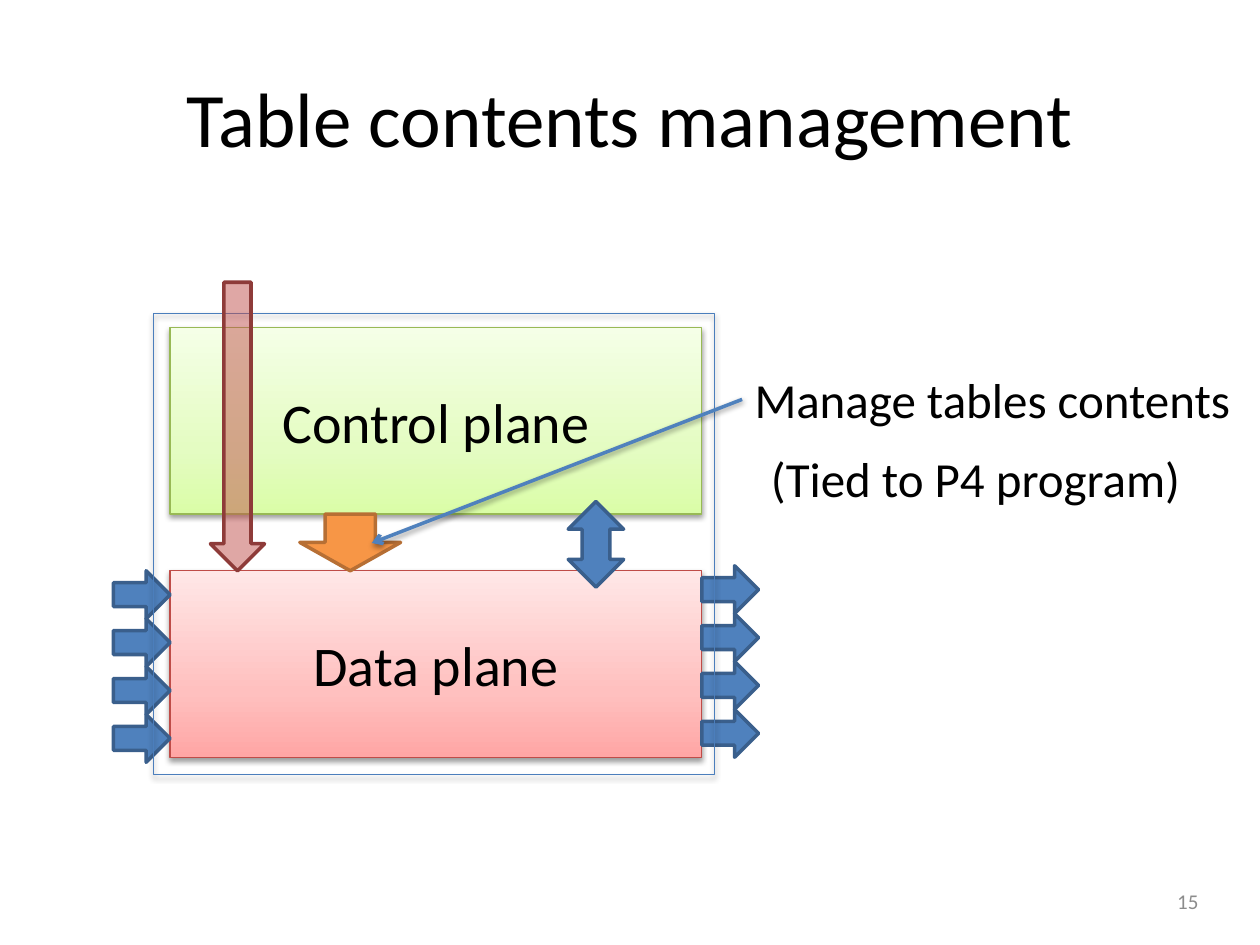
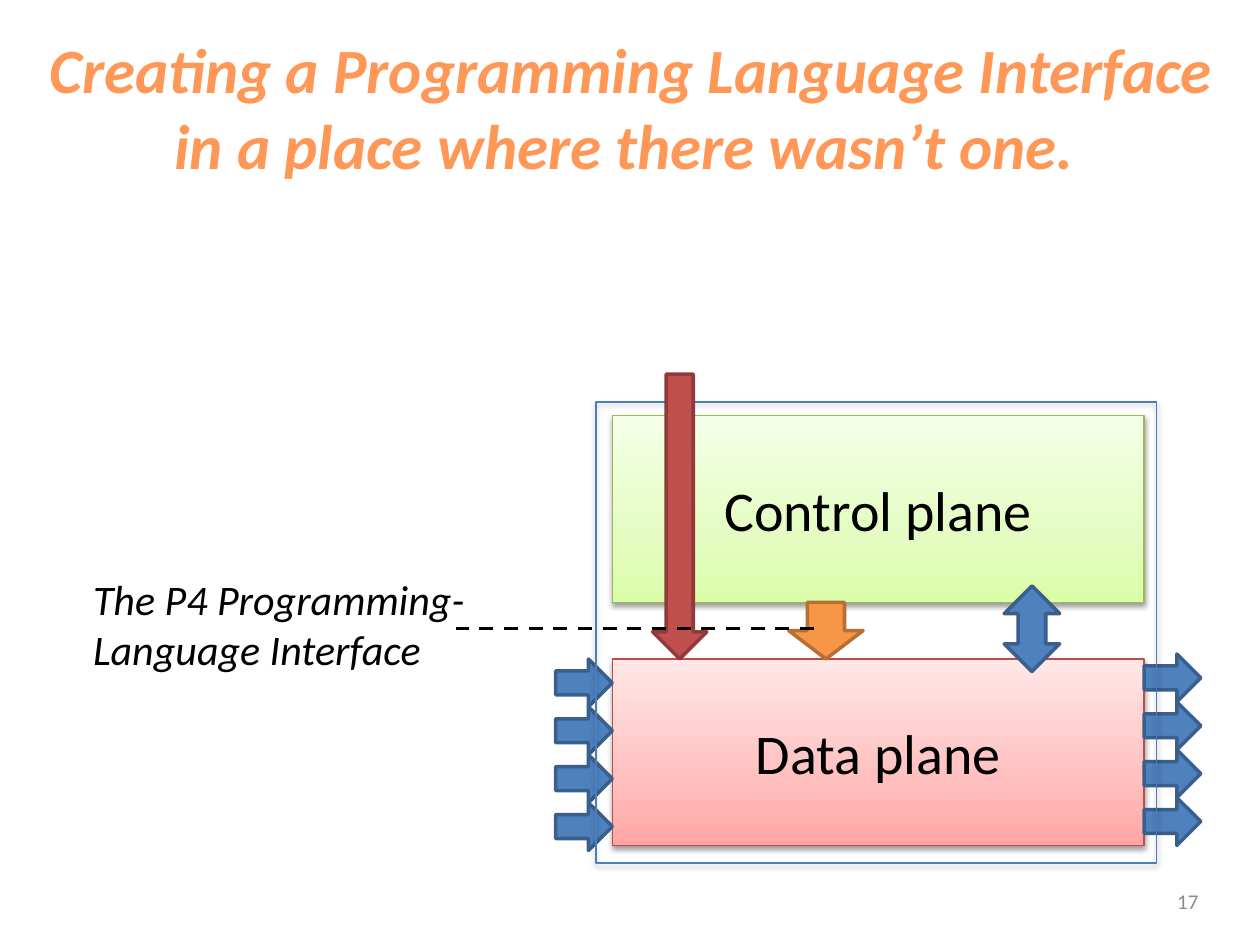
from copy import deepcopy
from dataclasses import dataclass

from pptx import Presentation
from pptx.dml.color import RGBColor
from pptx.enum.dml import MSO_LINE
from pptx.enum.shapes import MSO_CONNECTOR, MSO_SHAPE
from pptx.enum.text import MSO_ANCHOR, MSO_AUTO_SIZE, PP_ALIGN
from pptx.oxml import parse_xml
from pptx.oxml.ns import nsdecls, qn
from pptx.util import Pt

PX = 9144  # 100 px to the inch
RECTANGLE = MSO_SHAPE.RECTANGLE
RIGHT_ARROW = MSO_SHAPE.RIGHT_ARROW
DOWN_ARROW = MSO_SHAPE.DOWN_ARROW
UP_DOWN_ARROW = MSO_SHAPE.UP_DOWN_ARROW
STRAIGHT = MSO_CONNECTOR.STRAIGHT
DASH = MSO_LINE.DASH
TOP, MIDDLE = MSO_ANCHOR.TOP, MSO_ANCHOR.MIDDLE
LEFT, CENTER, RIGHT = PP_ALIGN.LEFT, PP_ALIGN.CENTER, PP_ALIGN.RIGHT
NO_AUTOFIT = MSO_AUTO_SIZE.NONE


@dataclass(frozen=True)
class Theme:
    font: str = "Calibri"
    text: str = "000000"
    highlight: str = "FF9856"
    muted: str = "8C8C8C"
    blue: str = "4F81BD"
    blue_line: str = "3A5F8C"
    frame_line: str = "4B7EBC"
    orange: str = "F79646"
    orange_line: str = "B76F34"
    red: str = "C0504D"
    red_line: str = "8E3B39"
    green_gradient: tuple = ((0, "DAFDA7"), (0.35, "E4FCC2"), (1, "F5FFE7"))
    green_line: str = "98B955"
    pink_gradient: tuple = ((0, "FFA6A5"), (0.35, "FFC0BF"), (1, "FFE7E7"))
    pink_line: str = "BF4C48"
    title_size: int = 44
    statement_size: int = 36
    plane_size: int = 32
    note_size: int = 28
    caption_size: int = 24
    number_size: int = 12
    thin: float = 0.75
    thick: float = 2
    shadow: str = (
        f'<a:outerShdw {nsdecls("a")} blurRad="40000" dist="20000" dir="5400000" '
        'rotWithShape="0"><a:srgbClr val="000000"><a:alpha val="38000"/>'
        "</a:srgbClr></a:outerShdw>"
    )


theme = Theme()


def write_text(text_frame, text, *, size, color=theme.text, align=LEFT,
               anchor=TOP, wrap=True, bold=False, italic=False):
    text_frame.auto_size = NO_AUTOFIT
    text_frame.word_wrap = wrap
    text_frame.vertical_anchor = anchor
    paragraph = text_frame.paragraphs[0]
    paragraph.text = text
    paragraph.alignment = align
    for run in paragraph.runs:
        font = run.font
        font.name, font.size = theme.font, Pt(size)
        font.bold, font.italic = bold, italic
        font.color.rgb = RGBColor.from_string(color)


def draw_shape(slide, kind, box, *, line, width=theme.thick, fill=None,
               opacity=100, shadow=False):
    """Add a shape; fill is a colour, a tuple of gradient stops or None."""
    shape = slide.shapes.add_shape(kind, *(length * PX for length in box))
    properties = shape._element.spPr
    if fill is None:
        shape.fill.background()
    elif isinstance(fill, tuple):
        shape.fill.gradient()
        shape.fill.gradient_angle = 90
        stop_list = properties.find(".//" + qn("a:gsLst"))
        stop_list.append(deepcopy(stop_list[0]))
        for stop, (position, color) in zip(shape.fill.gradient_stops, fill):
            stop.position = position
            stop.color.rgb = RGBColor.from_string(color)
    else:
        shape.fill.solid()
        shape.fill.fore_color.rgb = RGBColor.from_string(fill)
        if opacity < 100:
            color_element = properties.find(qn("a:solidFill"))[0]
            color_element.append(
                parse_xml(f'<a:alpha {nsdecls("a")} val="{opacity * 1000}"/>'))
    shape.line.color.rgb = RGBColor.from_string(line)
    shape.line.width = Pt(width)
    shape.shadow.inherit = False
    if shadow:
        properties.find(qn("a:effectLst")).append(parse_xml(theme.shadow))
    return shape


# Diagram lengths are measured from the corner of the device frame.
FRAME_WIDTH, FRAME_HEIGHT = 445, 366
PLANE_LEFT, PLANE_WIDTH, PLANE_HEIGHT = 13, 422, 148
CONTROL_TOP, DATA_TOP = 11, 204
CONTROL_BOTTOM = CONTROL_TOP + PLANE_HEIGHT
PORT_COUNT, PORT_WIDTH, PORT_HEIGHT = 4, 45, 38
PLANES = (
    ("Control plane", CONTROL_TOP, theme.green_gradient, theme.green_line),
    ("Data plane", DATA_TOP, theme.pink_gradient, theme.pink_line),
)
PORT_COLUMNS = (
    (PLANE_LEFT - PORT_WIDTH, DATA_TOP),
    (PLANE_LEFT + PLANE_WIDTH, DATA_TOP - 4),
)

SLIDES = (
    dict(
        number="15",
        title="Table contents management",
        title_box=(50, 30, 900, 125),
        title_format=dict(size=theme.title_size),
        frame=(122, 249),
        program_top=-25, program_opacity=50,
        table_arrow=(116, 80),
        sync_arrow=(329, 149),
        pointer=dict(ends=(589, 317, 295, 431), color=theme.blue, callout=True),
        notes=(
            ("Manage tables contents", (589, 288, 404, 57),
             dict(size=theme.note_size, wrap=False)),
            ("(Tied to P4 program)", (602, 351, 368, 57),
             dict(size=theme.note_size)),
        ),
    ),
    dict(
        number="17",
        title="Creating a Programming Language Interface\v"
              "in a place where there wasn’t one. ",
        title_box=(15, 19, 972, 131),
        title_format=dict(size=theme.statement_size, color=theme.highlight,
                          bold=True, italic=True),
        frame=(473, 319),
        program_top=-22, program_opacity=100,
        table_arrow=(153, 59),
        sync_arrow=(324, 146),
        pointer=dict(ends=(646, 499, 362, 499), color=theme.text, callout=False),
        notes=(
            ("The P4 Programming-\vLanguage Interface", (64, 450, 326, 91),
             dict(size=theme.caption_size, wrap=False, italic=True)),
        ),
    ),
)

presentation = Presentation()
presentation.slide_width = 1000 * PX
presentation.slide_height = 750 * PX
title_only = presentation.slide_layouts[5]

for content in SLIDES:
    slide = presentation.slides.add_slide(title_only)
    frame_left, frame_top = content["frame"]

    title = slide.shapes.title
    title.left, title.top, title.width, title.height = (
        length * PX for length in content["title_box"])
    write_text(title.text_frame, content["title"], align=CENTER, anchor=MIDDLE,
               **content["title_format"])

    for name, top, gradient, outline in PLANES:
        plane = draw_shape(
            slide, RECTANGLE,
            (frame_left + PLANE_LEFT, frame_top + top, PLANE_WIDTH, PLANE_HEIGHT),
            fill=gradient, line=outline, width=theme.thin, shadow=True)
        write_text(plane.text_frame, name, size=theme.plane_size,
                   align=CENTER, anchor=MIDDLE)

    for left, top in PORT_COLUMNS:
        for row in range(PORT_COUNT):
            draw_shape(
                slide, RIGHT_ARROW,
                (frame_left + left, frame_top + top + row * PORT_HEIGHT,
                 PORT_WIDTH, PORT_HEIGHT),
                fill=theme.blue, line=theme.blue_line)

    left, width = content["table_arrow"]
    draw_shape(
        slide, DOWN_ARROW,
        (frame_left + left, frame_top + CONTROL_BOTTOM,
         width, DATA_TOP - CONTROL_BOTTOM),
        fill=theme.orange, line=theme.orange_line)

    draw_shape(slide, RECTANGLE, (frame_left, frame_top, FRAME_WIDTH, FRAME_HEIGHT),
               line=theme.frame_line, width=theme.thin, shadow=True)

    top = content["program_top"]
    draw_shape(slide, DOWN_ARROW,
               (frame_left + 45, frame_top + top, 43, DATA_TOP - top),
               fill=theme.red, line=theme.red_line,
               opacity=content["program_opacity"])

    left, top = content["sync_arrow"]
    draw_shape(slide, UP_DOWN_ARROW, (frame_left + left, frame_top + top, 44, 68),
               fill=theme.blue, line=theme.blue_line)

    pointer = content["pointer"]
    connector = slide.shapes.add_connector(
        STRAIGHT, *(length * PX for length in pointer["ends"]))
    connector.line.color.rgb = RGBColor.from_string(pointer["color"])
    connector.line.width = Pt(theme.thick)
    effects = parse_xml(f'<a:effectLst {nsdecls("a")}/>')
    if pointer["callout"]:
        connector.line._ln.append(
            parse_xml(f'<a:tailEnd {nsdecls("a")} type="arrow"/>'))
        effects.append(parse_xml(theme.shadow))
    else:
        connector.line.dash_style = DASH
    connector._element.spPr.append(effects)

    for text, box, text_format in content["notes"]:
        note = slide.shapes.add_textbox(*(length * PX for length in box))
        write_text(note.text_frame, text, **text_format)

    number = slide.shapes.add_textbox(857 * PX, 695 * PX, 104 * PX, 40 * PX)
    write_text(number.text_frame, content["number"], size=theme.number_size,
               color=theme.muted, align=RIGHT, anchor=MIDDLE)

presentation.save("out.pptx")
